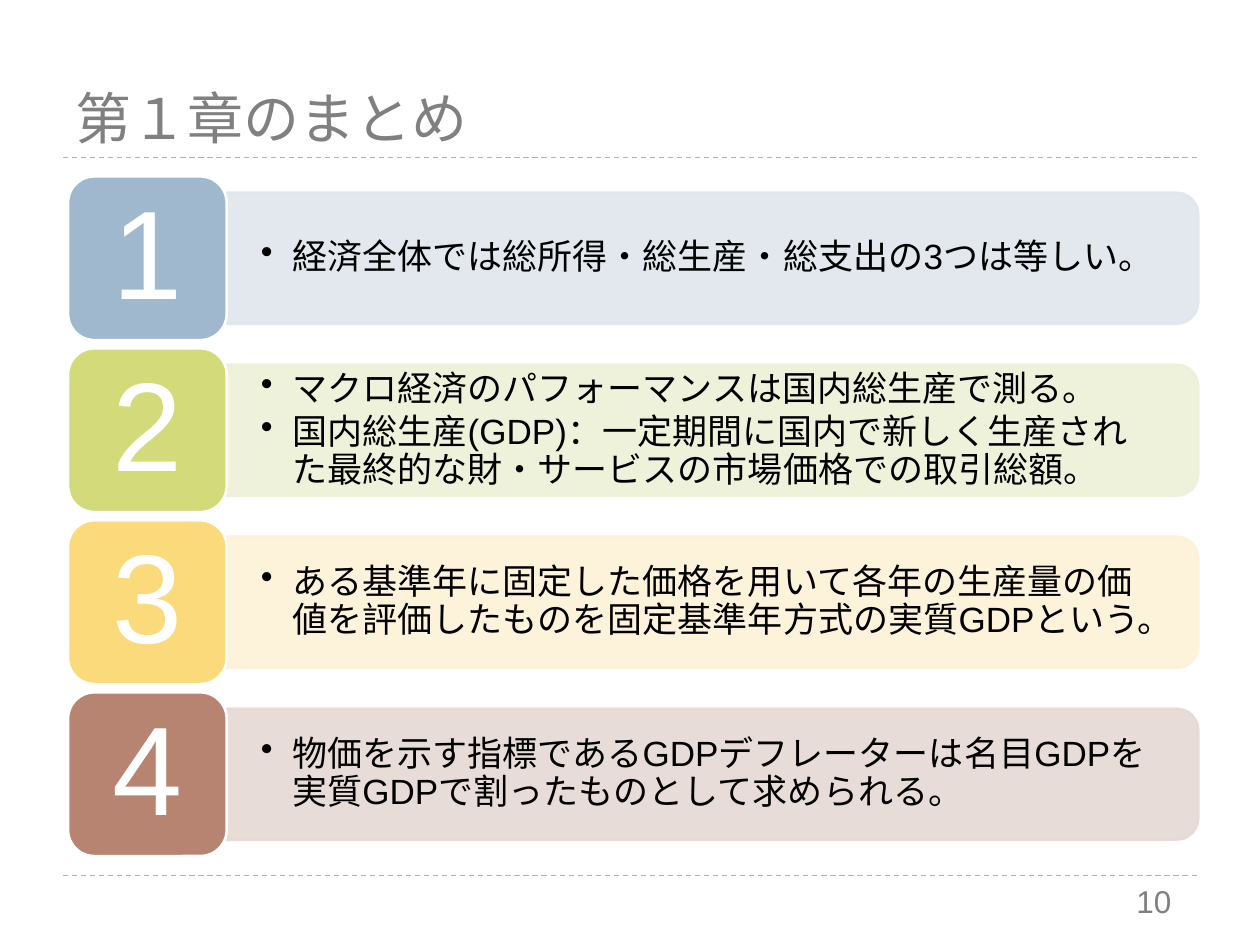
from lxml import etree
from pptx import Presentation
from pptx import util as u
from pptx.dml.color import RGBColor
from pptx.enum import dml, shapes, text
from pptx.oxml.ns import qn

COLORS = {"rule": "9FB8CD", "grey": "808080", "black": "000000", "white": "FFFFFF"}
# Each row: badge colour, bar colour, bullet points
ROWS = [
    ("9FB8CD", "DFE6ED", ["経済全体では総所得・総生産・総支出の3つは等しい。"]),
    ("D2DA7A", "EEF1D7", [
        "マクロ経済のパフォーマンスは国内総生産で測る。",
        "国内総生産(GDP)：一定期間に国内で新しく生産された"
        "最終的な財・サービスの市場価格での取引総額。"]),
    ("FADA7A", "FDF1D7", [
        "ある基準年に固定した価格を用いて各年の生産量の価値を"
        "評価したものを固定基準年方式の実質GDPという。"]),
    ("B88472", "E6D9D5", [
        "物価を示す指標であるGDPデフレーターは名目GDPを"
        "実質GDPで割ったものとして求められる。"]),
]
LEFT, TOP, WIDTH = 0.54, 1.4, 8.97
BADGE_WIDTH, ROW_HEIGHT, PITCH = 1.26, 1.3, 1.365
BAR_SHARE = 0.8  # bar height as a share of the row


def inches(*lengths):
    return [u.Inches(length) for length in lengths]


def apply(target, **values):
    for name, value in values.items():
        setattr(target, name, value)


def set_frame(frame, anchor, side=0.1, end=0.05):
    apply(frame, word_wrap=True, vertical_anchor=anchor,
          margin_left=u.Inches(side), margin_right=u.Inches(side),
          margin_top=u.Inches(end), margin_bottom=u.Inches(end))


def write(para, words, size, color, **para_format):
    apply(para, **para_format)
    span = para.add_run()
    span.text = words
    apply(span.font, size=u.Pt(size), name="Arial")
    span.font.color.rgb = RGBColor.from_string(color)


def paint(shape, fill, line, alpha=None):
    shape.shadow.inherit = False
    shape.fill.solid()
    shape.fill.fore_color.rgb = RGBColor.from_string(fill)
    shape.line.color.rgb = RGBColor.from_string(line)
    shape.line.width = u.Pt(1.5)
    if alpha:
        for color in shape._element.spPr.iter(qn("a:srgbClr")):
            etree.SubElement(color, qn("a:alpha"), val=str(alpha * 1000))


def add_bullet(para):
    props = para._p.get_or_add_pPr()
    props.set("marL", str(u.Inches(0.25)))
    props.set("indent", str(u.Inches(-0.25)))
    etree.SubElement(props, qn("a:buChar"), char="•")


def add_rule(page, y):
    rule = page.shapes.add_connector(shapes.MSO_CONNECTOR.STRAIGHT, *inches(0.5, y, 9.5, y))
    rule.line.color.rgb = RGBColor.from_string(COLORS["rule"])
    apply(rule.line, width=u.Pt(0.75), dash_style=dml.MSO_LINE.DASH)
    etree.SubElement(rule._element.spPr, qn("a:effectLst"))


def add_header(page, left, top, width, height):
    title = page.shapes.title
    title.left, title.top, title.width, title.height = inches(left, top, width, height)
    set_frame(title.text_frame, text.MSO_ANCHOR.BOTTOM)
    write(title.text_frame.paragraphs[0], "第１章のまとめ", 32, COLORS["grey"],
          alignment=text.PP_ALIGN.LEFT)
    add_rule(page, top + height)


def add_footer(page, left, top, width, height):
    add_rule(page, top)
    box = page.shapes.add_textbox(*inches(left, top, width, height))
    set_frame(box.text_frame, text.MSO_ANCHOR.TOP)
    write(box.text_frame.paragraphs[0], "10", 18, COLORS["grey"])


def add_row(page, number, row, left, top, width, height):
    badge_color, bar_color, points = row
    bar_left, bar_width = left + BADGE_WIDTH, width - BADGE_WIDTH
    bar_height = height * BAR_SHARE
    middle = top + height / 2

    # Bar: an upright tab turned so that its round corners face right
    bar = page.shapes.add_shape(
        shapes.MSO_SHAPE.ROUND_2_SAME_RECTANGLE,
        *inches(bar_left + (bar_width - bar_height) / 2, middle - bar_width / 2,
                bar_height, bar_width))
    bar.rotation = 90
    paint(bar, bar_color, bar_color, alpha=90)

    # Bullet points
    box = page.shapes.add_textbox(
        *inches(bar_left, middle - bar_height / 2, bar_width - 0.05, bar_height))
    frame = box.text_frame
    set_frame(frame, text.MSO_ANCHOR.MIDDLE, side=0.27, end=0)
    for index, point in enumerate(points):
        para = frame.add_paragraph() if index else frame.paragraphs[0]
        write(para, point, 20, COLORS["black"], line_spacing=0.9, space_after=u.Pt(3))
        add_bullet(para)

    # Numbered badge
    badge = page.shapes.add_shape(shapes.MSO_SHAPE.ROUNDED_RECTANGLE,
                                  *inches(left, top, BADGE_WIDTH, height))
    paint(badge, badge_color, COLORS["white"])
    set_frame(badge.text_frame, text.MSO_ANCHOR.MIDDLE, side=0, end=0)
    write(badge.text_frame.paragraphs[0], str(number), 72, COLORS["white"],
          alignment=text.PP_ALIGN.CENTER, line_spacing=0.9)


def main():
    deck = Presentation()
    deck.slide_width, deck.slide_height = inches(10, 7.5)
    page = deck.slides.add_slide(deck.slide_layouts.get_by_name("Title Only"))
    add_header(page, 0.5, 0.17, 9, 1.08)
    for index, row in enumerate(ROWS):
        add_row(page, index + 1, row, LEFT, TOP + index * PITCH, WIDTH, ROW_HEIGHT)
    add_footer(page, 8.92, 6.95, 0.58, 0.4)
    deck.save("out.pptx")


if __name__ == "__main__":
    main()
